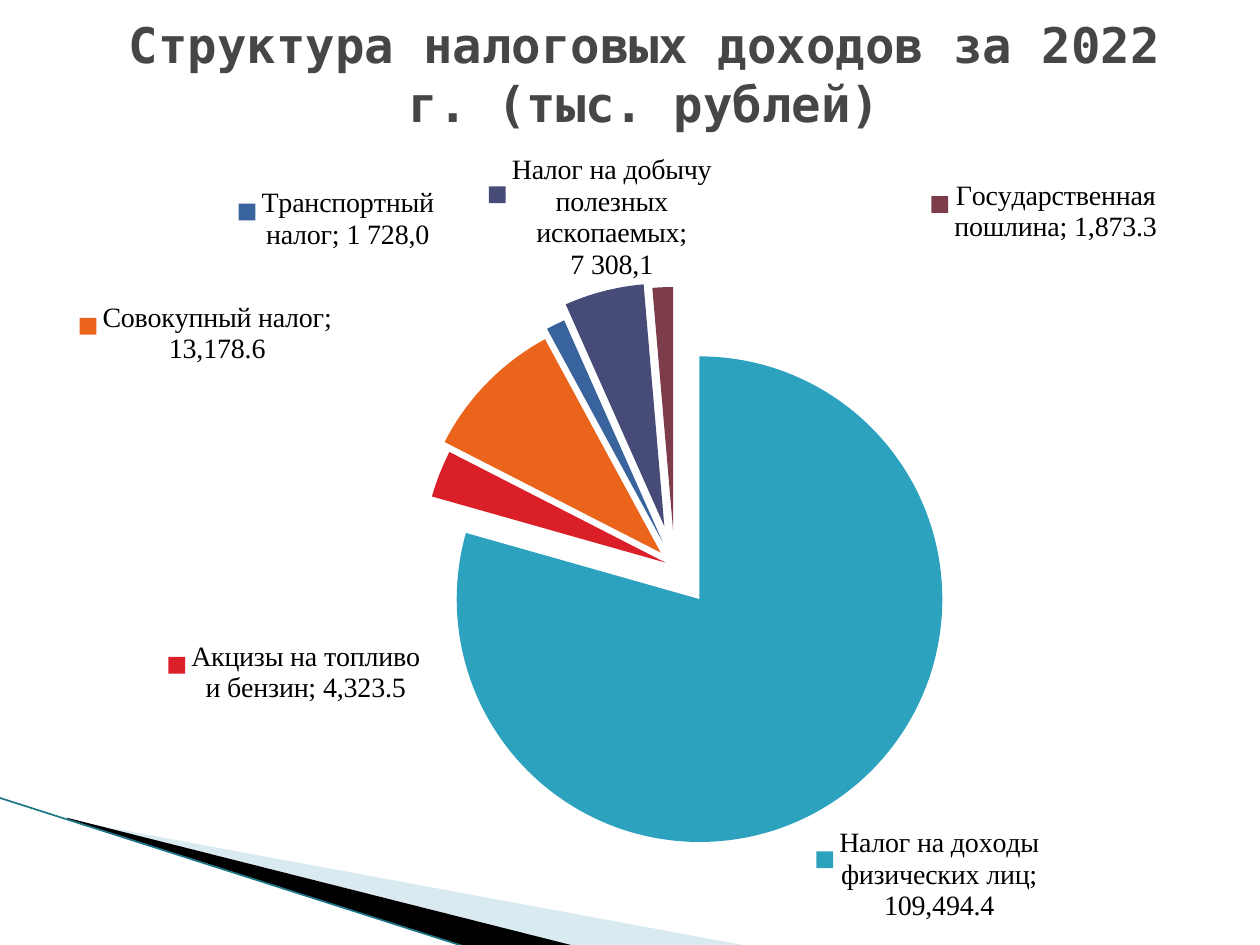
from lxml import etree
from pptx import Presentation
from pptx.chart.data import CategoryChartData
from pptx.dml.color import RGBColor
from pptx.enum.chart import XL_CHART_TYPE as ChartType, XL_LABEL_POSITION as LabelPos
from pptx.enum.shapes import MSO_CONNECTOR as Connector
from pptx.enum.text import MSO_ANCHOR as Anchor, PP_ALIGN as Align
from pptx.oxml import parse_xml
from pptx.oxml.ns import nsdecls, qn
from pptx.util import Inches, Pt

COLORS = {"pale": "A0CBDC", "black": "000000", "edge": "1B7587", "title": "464646"}
TITLE_FONT, LABEL_FONT = "DejaVu Sans Mono", "Times New Roman"
CHART_WIDTH, CHART_HEIGHT = 9.53, 6.09

# Category, value, colour, explosion, label shift in inches, own label text
TAXES = [
    ("Налог на доходы физических лиц", 109494.4, "2DA2BF", 17, (-0.27, 0.28), None),
    ("Акцизы на топливо и бензин", 4323.5, "DA1F28", 4, (-0.1, 1.85), None),
    ("Совокупный налог", 13178.6, "EB641B", 8, (-1.19, -0.1), None),
    ("Транспортный налог", 1728, "39639D", 11, (-0.94, -0.53),
     ["Транспортный налог; 1 728,0"]),
    ("Налог на добычу полезных ископаемых", 7308.1, "474B78", 17, (0.87, -0.04),
     ["Налог на добычу полезных ископаемых;", "7 308,1"]),
    ("Государственная пошлина", 1873.3, "7D3C4A", 15, (3.03, -0.29), None),
]


def manual_layout(x, y, **settings):
    """Chart layout element; lengths in inches become shares of the chart."""
    settings.update(x=x / CHART_WIDTH, y=y / CHART_HEIGHT)
    if "layoutTarget" in settings:
        settings.update(w=8.03 / CHART_WIDTH, h=4.51 / CHART_HEIGHT)
    items = "".join(f'<c:{name} val="{value}"/>' for name, value in settings.items())
    return parse_xml(f'<c:layout {nsdecls("c")}><c:manualLayout>{items}'
                     '</c:manualLayout></c:layout>')


def style_font(font, name, size, color):
    font.name, font.size = name, Pt(size)
    font.color.rgb = RGBColor.from_string(color)


deck = Presentation()
deck.slide_width, deck.slide_height = Inches(10), Inches(7.5)
page = deck.slides.add_slide(deck.slide_layouts[6])

# Corner wedges
wedges = [
    ("pale", 40, [(0.55, 6.51), (5.95, 7.51), (4.56, 7.51), (0.55, 6.5)]),
    ("black", 100, [(0.53, 6.49), (4.57, 7.51), (3.72, 7.52), (0.54, 6.5)]),
]
for color, opacity, corners in wedges:
    points = [(Inches(x), Inches(y)) for x, y in corners]
    builder = page.shapes.build_freeform(*points[0], scale=1.0)
    builder.add_line_segments(points[1:], close=True)
    wedge = builder.convert_to_shape()
    wedge.shadow.inherit = False
    wedge.line.fill.background()
    wedge.fill.solid()
    wedge.fill.fore_color.rgb = RGBColor.from_string(COLORS[color])
    if opacity < 100:
        tint = wedge._element.spPr.find(".//" + qn("a:srgbClr"))
        etree.SubElement(tint, qn("a:alpha")).set("val", str(opacity * 1000))

edge = page.shapes.add_connector(
    Connector.STRAIGHT, Inches(-0.01), Inches(6.33), Inches(3.71), Inches(7.52))
edge.line.color.rgb = RGBColor.from_string(COLORS["edge"])
edge.line.width = Pt(0.95)
etree.SubElement(edge._element.spPr, qn("a:effectLst"))

# Pie chart
data = CategoryChartData(number_format="#,##0.0")
data.categories = [tax[0] for tax in TAXES]
data.add_series("Series 1", [tax[1] for tax in TAXES])
chart = page.shapes.add_chart(
    ChartType.PIE, Inches(0.28), Inches(1.23),
    Inches(CHART_WIDTH), Inches(CHART_HEIGHT), data).chart
chart.has_title = chart.has_legend = False
style_font(chart.font, TITLE_FONT, 18, COLORS["black"])

plot_area = chart._chartSpace.chart.plotArea
for old in plot_area.findall(qn("c:layout")):
    plot_area.remove(old)
plot_area.insert(0, manual_layout(
    1.06, 1.01, layoutTarget="inner", xMode="edge", yMode="edge"))

plot = chart.plots[0]
plot.vary_by_categories = True
series = plot.series[0]
series._element.find(qn("c:tx")).addnext(
    parse_xml(f'<c:explosion {nsdecls("c")} val="17"/>'))

# Slices and their labels
labels = series.data_labels
labels.show_value = labels.show_category_name = labels.show_legend_key = True
labels.number_format, labels.number_format_is_linked = "#,##0.0", False
style_font(labels.font, LABEL_FONT, 16, COLORS["black"])
leader = labels._element.find(qn("c:showLeaderLines"))
if leader is not None:
    leader.set("val", "0")

for index, (_, _, color, explosion, shift, lines) in enumerate(TAXES):
    point = series.points[index]
    point.format.fill.solid()
    point.format.fill.fore_color.rgb = RGBColor.from_string(color)
    slice_node = series._element.findall(qn("c:dPt"))[index]
    slice_node.find(qn("c:spPr")).addprevious(
        parse_xml(f'<c:explosion {nsdecls("c")} val="{explosion}"/>'))

    label = point.data_label
    if lines:
        frame = label.text_frame
        for number, line in enumerate(lines):
            para = frame.add_paragraph() if number else frame.paragraphs[0]
            span = para.add_run()
            span.text = line
            style_font(span.font, LABEL_FONT, 16, COLORS["black"])
    else:
        style_font(label.font, LABEL_FONT, 16, COLORS["black"])
    label.position = LabelPos.BEST_FIT

    node = labels._element.findall(qn("c:dLbl"))[index]
    for name in ("showLegendKey", "showVal", "showCatName"):
        node.find(qn("c:" + name)).set("val", "1")
    node.find(qn("c:idx")).addnext(manual_layout(*shift))
    before = node.find(qn("c:tx")) if lines else node.find(qn("c:layout"))
    before.addnext(parse_xml(
        f'<c:numFmt {nsdecls("c")} formatCode="#,##0.0" sourceLinked="0"/>'))
    node.find(qn("c:showBubbleSize")).addnext(
        parse_xml(f'<c:separator {nsdecls("c")}>; </c:separator>'))

# Title
box = page.shapes.add_textbox(Inches(0.78), Inches(0), Inches(8.67), Inches(1.17))
frame = box.text_frame
frame.word_wrap = True
frame.vertical_anchor = Anchor.MIDDLE
para = frame.paragraphs[0]
para.alignment = Align.CENTER
span = para.add_run()
span.text = "Структура налоговых доходов за 2022 г. (тыс. рублей)"
style_font(span.font, TITLE_FONT, 28, COLORS["title"])
span.font.bold = True

deck.save("out.pptx")
